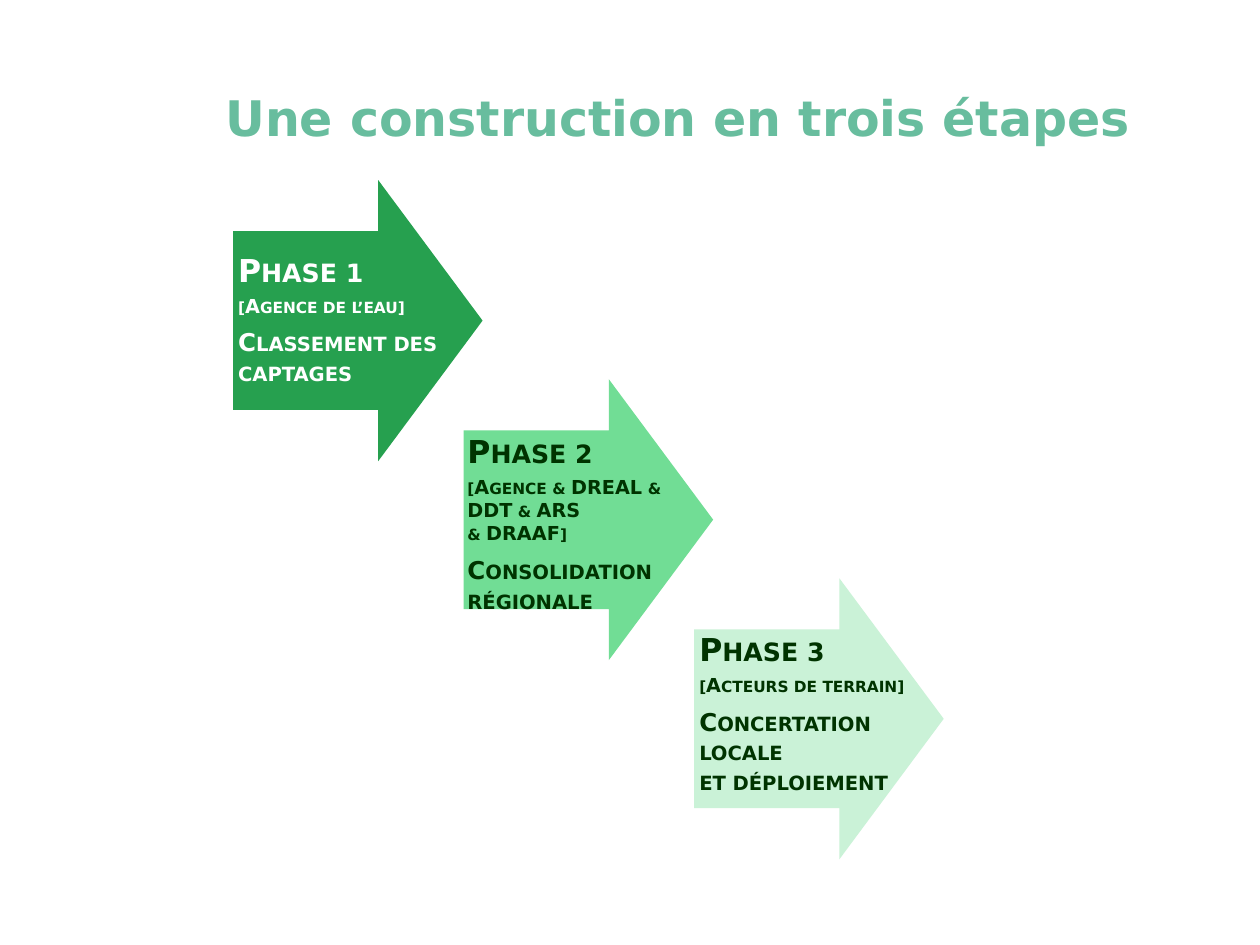
from dataclasses import dataclass
from pptx import Presentation
from pptx.dml.color import RGBColor
from pptx.enum.shapes import MSO_SHAPE as SHAPE
from pptx.enum.text import MSO_ANCHOR as ANCHOR
from pptx.util import Inches, Pt


@dataclass(frozen=True)
class Theme:
    font: str = "DejaVu Sans"
    title: str = "68BD9E"
    light: str = "FFFFFF"
    dark: str = "003300"
    fills: tuple = ("26A04F", "71DD95", "CAF2D7")
    title_size: int = 28
    phase_size: int = 18
    actor_size: int = 11
    step_size: int = 14


THEME = Theme()
ARROW_W, ARROW_H = 1.98, 2.23
LABEL_W = 1.87
FIRST_X, FIRST_Y = 1.85, 1.43
STEP_X, STEP_Y = 1.83, 1.58

PHASES = [
    dict(name="Phase 1", actors=["[Agence de l’eau]"],
         steps=["Classement des", "captages"],
         color=THEME.light, label=(0, 0.56, 1.2)),
    dict(name="Phase 2", actors=["[Agence & DREAL & DDT & ARS", "& DRAAF]"],
         steps=["Consolidation", "régionale"],
         color=THEME.dark, label=(-0.01, 0.42, 1.35)),
    dict(name="Phase 3", actors=["[Acteurs de terrain]"],
         steps=["Concertation", "locale", "et déploiement"],
         color=THEME.dark, label=(0, 0.41, 1.35)),
]


def set_attrs(obj, **values):
    for name, value in values.items():
        setattr(obj, name, value)


def add_text(p, text, size, color, small_caps=False):
    r = p.add_run()
    r.text = text
    set_attrs(r.font, name=THEME.font, size=Pt(size), bold=True)
    r.font.color.rgb = RGBColor.from_string(color)
    if small_caps:
        r._r.get_or_add_rPr().set("cap", "small")


def add_title(slide, x, y, w, h):
    sp = slide.shapes.add_textbox(Inches(x), Inches(y), Inches(w), Inches(h))
    tf = sp.text_frame
    set_attrs(tf, word_wrap=True, vertical_anchor=ANCHOR.MIDDLE)
    add_text(tf.paragraphs[0], "Une construction en trois étapes",
             THEME.title_size, THEME.title)


def add_arrow(slide, x, y, fill):
    sp = slide.shapes.add_shape(SHAPE.RIGHT_ARROW, Inches(x), Inches(y),
                                Inches(ARROW_W), Inches(ARROW_H))
    sp.adjustments[0], sp.adjustments[1] = 0.636, 0.418
    sp.shadow.inherit = False
    sp.fill.solid()
    sp.fill.fore_color.rgb = RGBColor.from_string(fill)
    sp.line.fill.background()


def add_label(slide, x, y, phase):
    dx, dy, h = phase["label"]
    sp = slide.shapes.add_textbox(Inches(x + dx), Inches(y + dy),
                                  Inches(LABEL_W), Inches(h))
    tf = sp.text_frame
    set_attrs(tf, word_wrap=True, margin_left=Inches(0.04),
              margin_top=0, margin_right=0, margin_bottom=0)
    blocks = [([phase["name"]], THEME.phase_size, 3),
              (phase["actors"], THEME.actor_size, 6),
              (phase["steps"], THEME.step_size, 0)]
    p = tf.paragraphs[0]
    for lines, size, after in blocks:
        for line in lines:
            if p.runs:
                p = tf.add_paragraph()
            add_text(p, line, size, phase["color"], small_caps=True)
        p.space_after = Pt(after)


def add_phase(slide, x, y, fill, phase):
    add_arrow(slide, x, y, fill)
    add_label(slide, x, y, phase)


def main():
    prs = Presentation()
    set_attrs(prs, slide_width=Inches(10), slide_height=Inches(7.5))
    slide = prs.slides.add_slide(prs.slide_layouts[6])
    add_title(slide, 1.69, 0.3, 7.81, 1.25)
    for i, (fill, phase) in enumerate(zip(THEME.fills, PHASES)):
        add_phase(slide, FIRST_X + i * STEP_X, FIRST_Y + i * STEP_Y, fill, phase)
    prs.save("out.pptx")


if __name__ == "__main__":
    main()
